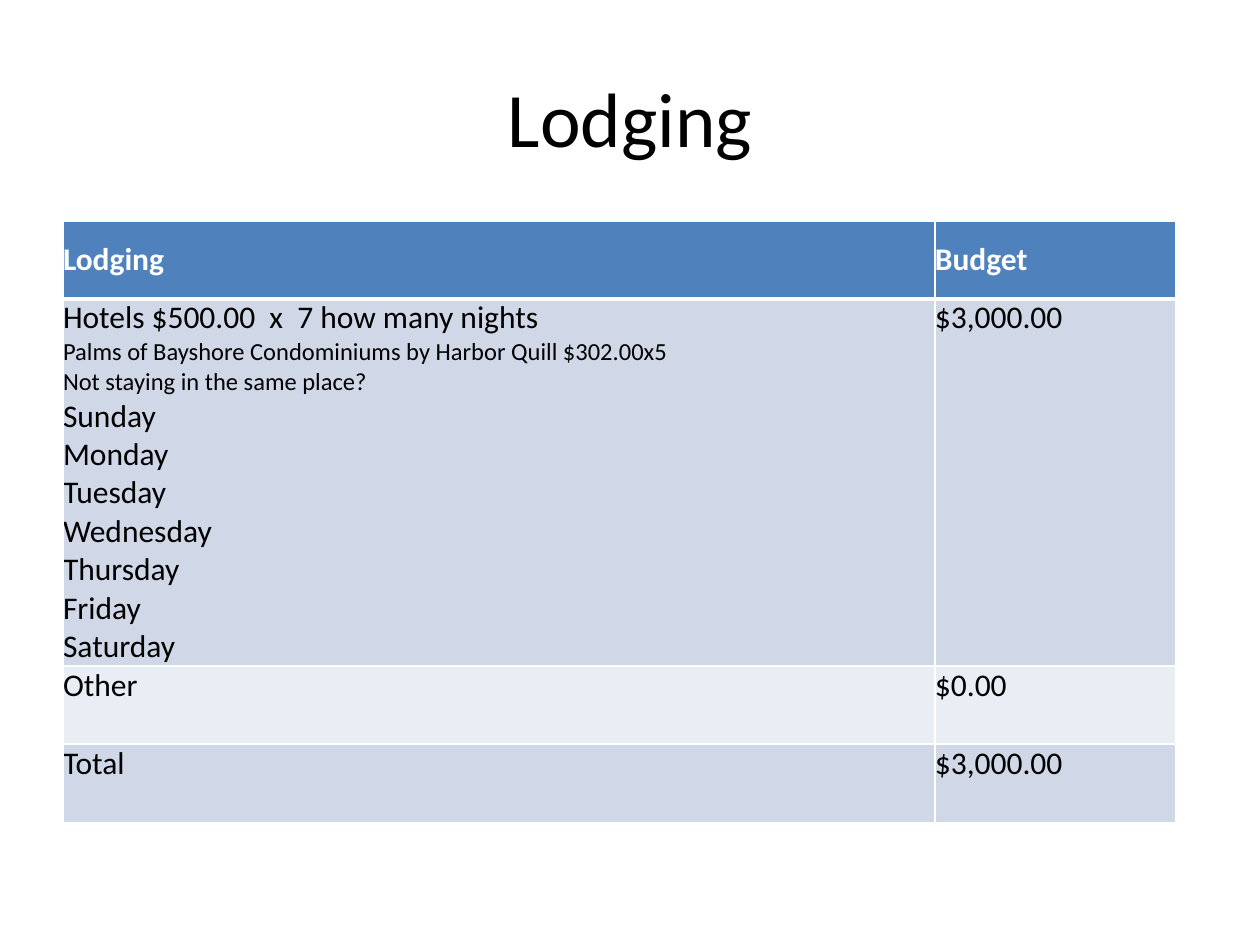
import pptx
import pptx.dml.color
import pptx.enum.text
import pptx.oxml
import pptx.oxml.ns
import pptx.util

PX = 914400 / 126
FONT = "Calibri"
BLACK, WHITE = "000000", "FFFFFF"
HEADER_BLUE, BAND_DARK, BAND_LIGHT = "4F81BD", "D0D8E8", "E9EDF4"
DAYS = ["Sunday", "Monday", "Tuesday", "Wednesday", "Thursday", "Friday", "Saturday"]
HOTELS = [
    ("Hotels $500.00  x  7 how many nights", 18),
    ("Palms of Bayshore Condominiums by Harbor Quill $302.00x5", 14),
    ("Not staying in the same place?", 14),
] + [(day, 18) for day in DAYS]
BUDGET = [
    ([("Lodging", 18)], "Budget", HEADER_BLUE, 78),
    (HOTELS, "$3,000.00", BAND_DARK, 367),
    ([("Other", 18)], "$0.00", BAND_LIGHT, 78),
    ([("Total", 18)], "$3,000.00", BAND_DARK, 79),
]
COLUMN_WIDTHS = [872, 241]


def px(length):
    """Turn whole pixels into EMU."""
    return pptx.util.Emu(round(length * PX))


def rgb(code):
    """Turn a hex string into a colour."""
    return pptx.dml.color.RGBColor.from_string(code)


def write(paragraph, text, size=18, color=BLACK, bold=False, align=None):
    """Put one formatted run into a paragraph."""
    run = paragraph.add_run()
    run.text = text
    run.font.name = FONT
    run.font.size = pptx.util.Pt(size)
    run.font.bold = bold
    run.font.color.rgb = rgb(color)
    paragraph.alignment = align


def set_borders(cell, top=1, bottom=1):
    """Draw white cell borders, with widths in points."""
    properties = cell._tc.get_or_add_tcPr()
    widths = {"lnL": 1, "lnR": 1, "lnT": top, "lnB": bottom}
    for position, (side, width) in enumerate(widths.items()):
        line = pptx.oxml.parse_xml(
            f'<a:{side} {pptx.oxml.ns.nsdecls("a")} w="{pptx.util.Pt(width)}">'
            f'<a:solidFill><a:srgbClr val="{WHITE}"/></a:solidFill></a:{side}>'
        )
        properties.insert(position, line)


def fill_cell(cell, lines, fill, header=False):
    """Set the fill, margins and text lines of a cell."""
    cell.fill.solid()
    cell.fill.fore_color.rgb = rgb(fill)
    cell.margin_left = cell.margin_right = cell.margin_top = cell.margin_bottom = 0
    anchors = pptx.enum.text.MSO_ANCHOR
    cell.vertical_anchor = anchors.MIDDLE if header else anchors.TOP
    frame = cell.text_frame
    for index, (text, size) in enumerate(lines):
        paragraph = frame.add_paragraph() if index else frame.paragraphs[0]
        write(paragraph, text, size=size, color=WHITE if header else BLACK, bold=header)


def add_title(slide, text):
    """Place and format the title placeholder."""
    title = slide.shapes.title
    title.left, title.top, title.width, title.height = map(px, (63, 38, 1134, 157))
    title.text_frame.vertical_anchor = pptx.enum.text.MSO_ANCHOR.MIDDLE
    write(title.text_frame.paragraphs[0], text, size=44,
          align=pptx.enum.text.PP_ALIGN.CENTER)


def add_budget(slide):
    """Build the lodging budget table."""
    total_height = sum(row[-1] for row in BUDGET)
    budget = slide.shapes.add_table(
        len(BUDGET), len(COLUMN_WIDTHS),
        px(63), px(221), px(sum(COLUMN_WIDTHS)), px(total_height),
    ).table
    for column, width in zip(budget.columns, COLUMN_WIDTHS):
        column.width = px(width)
    for index, (items, amount, fill, height) in enumerate(BUDGET):
        budget.rows[index].height = px(height)
        for cell, lines in zip(budget.rows[index].cells, (items, [(amount, 18)])):
            fill_cell(cell, lines, fill, header=index == 0)
            set_borders(cell, top=3 if index == 1 else 1, bottom=3 if index == 0 else 1)


def main():
    """Build the slide and save it."""
    deck = pptx.Presentation()
    deck.slide_width, deck.slide_height = px(1260), px(945)
    slide = deck.slides.add_slide(deck.slide_layouts[5])
    add_title(slide, "Lodging")
    add_budget(slide)
    deck.save("out.pptx")


if __name__ == "__main__":
    main()
